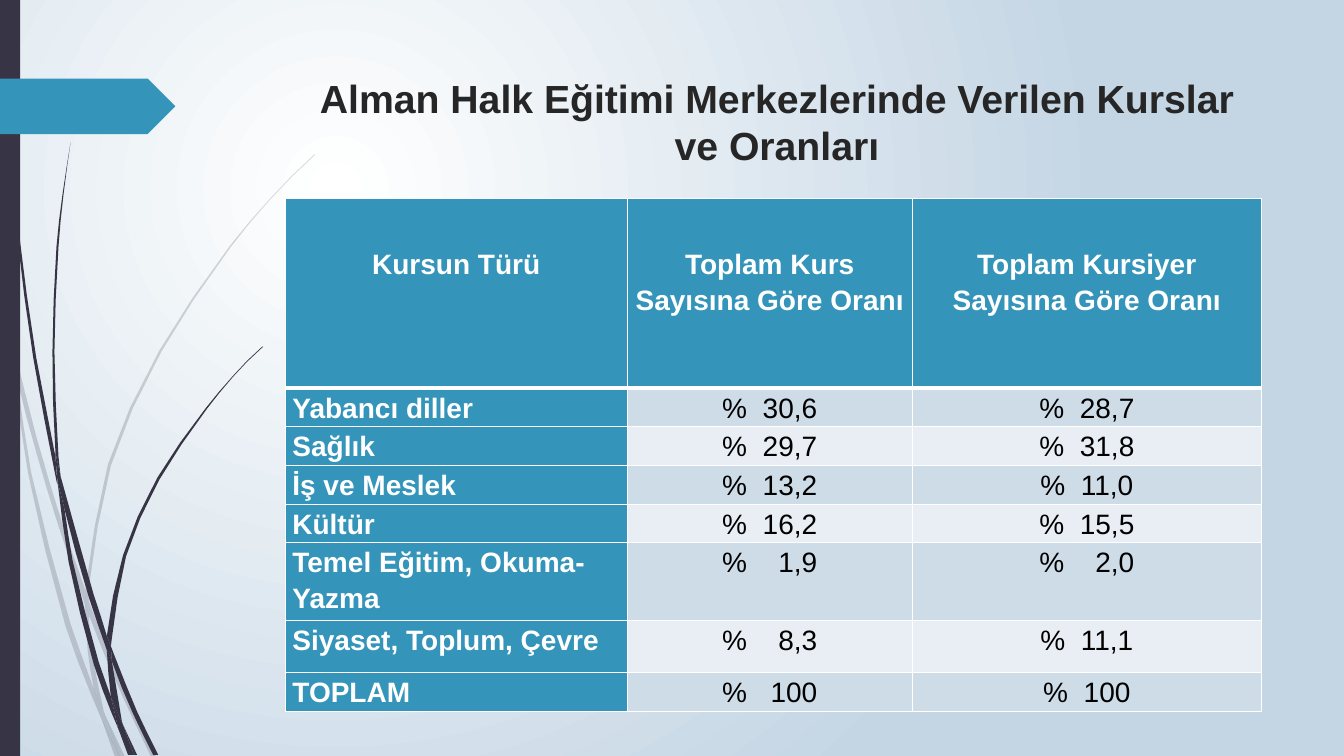
"""Build a slide with a table of course types and their shares."""
import pptx
import pptx.dml.color
import pptx.enum.shapes
import pptx.enum.text
import pptx.oxml
import pptx.oxml.ns
import pptx.util

Inches, Pt = pptx.util.Inches, pptx.util.Pt
SHAPE = pptx.enum.shapes.MSO_SHAPE
ALIGN = pptx.enum.text.PP_ALIGN
ANCHOR = pptx.enum.text.MSO_ANCHOR

TITLE = "Alman Halk Eğitimi Merkezlerinde Verilen Kurslar ve Oranları"
HEADER = ("Kursun Türü", "Toplam Kurs Sayısına Göre Oranı", "Toplam Kursiyer Sayısına Göre Oranı")
COURSES = [
    ("Yabancı diller", ("30,6", 1), ("28,7", 1)),
    ("Sağlık", ("29,7", 1), ("31,8", 1)),
    ("İş ve Meslek", ("13,2", 1), ("11,0", 1)),
    ("Kültür", ("16,2", 1), ("15,5", 1)),
    ("Temel Eğitim, Okuma- Yazma", ("1,9", 3), ("2,0", 3)),
    ("Siyaset, Toplum, Çevre", ("8,3", 3), ("11,1", 1)),
    ("TOPLAM", ("100", 2), ("100", 1)),
]
COL_WIDTHS = (3.39, 2.83, 3.46)
ROW_HEIGHTS = (1.88, 0.38, 0.38, 0.38, 0.38, 0.77, 0.52, 0.38)

THEME = {
    "accent": "3494BA", "dark": "373545", "title": "262626", "white": "FFFFFF",
    "black": "000000", "edge": "C4D5E4", "bands": ("CEDCE7", "E8EEF3"),
    "font": "Arial", "title_size": 28, "cell_size": 20, "rule": 1, "head_rule": 3,
    "pale_alpha": 20,
}

PALE_BLADES = [
    ([(0, 2.99), (0.1, 3.44), (0.11, 3.5)], [(0, 2.82), (0.09, 3.22), (0.11, 3.5)]),
    ([(0.14, 3.45), (0.17, 3.76), (0.36, 4.49), (0.58, 5.22), (0.84, 5.99)],
     [(0.14, 3.45), (0.36, 4.33), (0.62, 5.2), (0.85, 5.86)]),
    ([(0.88, 5.96), (0.88, 6.1), (1.23, 6.94), (1.5, 7.51)],
     [(0.88, 5.96), (0.92, 6.07), (1.27, 6.92), (1.55, 7.51)]),
    ([(1.05, 7.11), (1.19, 7.51)], [(1.05, 7.11), (1.24, 7.51)]),
    ([(0.11, 3.5), (0.28, 4.7), (0.65, 6.21), (0.92, 6.93), (1.01, 7.14)],
     [(0.11, 3.5), (0.17, 3.76), (0.31, 4.69), (0.7, 6.19), (0.93, 6.83), (0.99, 7.07),
      (1.01, 7.14)]),
    ([(0.84, 5.99), (0.87, 6.46), (0.93, 6.83), (0.96, 6.92), (1.05, 7.11)],
     [(0.84, 5.99), (0.88, 6.08), (0.88, 6.1), (0.91, 6.46), (1.03, 7.06), (1.05, 7.11)]),
    ([(3.12, 1.53), (2.89, 1.75), (2.68, 1.97), (2.28, 2.44), (1.58, 3.48), (1.07, 4.61),
      (0.85, 5.84), (0.85, 5.86), (0.88, 5.96)],
     [(3.12, 1.54), (2.9, 1.75), (2.68, 1.98), (2.29, 2.45), (1.6, 3.49), (1.1, 4.62),
      (0.88, 5.84), (0.88, 5.96)]),
    ([(1.01, 7.14), (1.14, 7.51)], [(1.01, 7.14), (1.19, 7.51)]),
    ([(0.85, 5.86), (0.84, 5.99), (0.88, 6.08), (0.88, 6.1)],
     [(0.85, 5.86), (0.88, 5.96), (0.88, 6.1)]),
    ([(0.93, 6.83), (0.99, 7.07), (1.01, 7.14), (1.19, 7.51)],
     [(0.93, 6.83), (0.96, 6.92), (1.05, 7.11), (1.19, 7.51)]),
]
DARK_BLADES = [
    ([(0.03, 0), (0.04, 0.48), (0.07, 1.1), (0.17, 2.33), (0.33, 3.55), (0.56, 4.77), (0.57, 4.81)],
     [(0.04, 0), (0.05, 0.48), (0.08, 1.09), (0.19, 2.32), (0.36, 3.55), (0.55, 4.53),
      (0.57, 4.81)]),
    ([(0.6, 4.72), (0.64, 5.05), (0.88, 5.92), (1.06, 6.45)],
     [(0.6, 4.72), (0.93, 5.9), (1.06, 6.31), (1.06, 6.45)]),
    ([(1.1, 6.41), (1.11, 6.56), (1.32, 7.08), (1.52, 7.49)],
     [(1.1, 6.41), (1.13, 6.49), (1.36, 7.06), (1.57, 7.49)]),
    ([(0.57, 4.77), (0.68, 5.57), (0.93, 6.59), (1.11, 7.08), (1.17, 7.22)],
     [(0.57, 4.77), (0.64, 5.05), (0.72, 5.56), (0.98, 6.57), (1.1, 6.91), (1.16, 7.17),
      (1.17, 7.22)]),
    ([(0.7, 1.41), (0.62, 1.93), (0.56, 2.45), (0.52, 3.49), (0.55, 4.49), (0.6, 4.72)],
     [(0.7, 1.41), (0.63, 1.93), (0.58, 2.45), (0.54, 3.49), (0.58, 4.53), (0.6, 4.72)]),
    ([(1.22, 7.19), (1.33, 7.49)], [(1.22, 7.19), (1.36, 7.49)]),
    ([(0.55, 4.49), (0.55, 4.53), (0.57, 4.77), (0.64, 5.05)],
     [(0.55, 4.49), (0.6, 4.72), (0.64, 5.05)]),
    ([(2.6, 3.44), (2.45, 3.58), (2.31, 3.73), (2.04, 4.05), (1.56, 4.74), (1.22, 5.51),
      (1.06, 6.31), (1.1, 6.41)],
     [(2.61, 3.44), (2.45, 3.59), (2.31, 3.74), (2.05, 4.06), (1.58, 4.76), (1.25, 5.52),
      (1.11, 6.33), (1.1, 6.41)]),
    ([(1.17, 7.22), (1.27, 7.49)], [(1.17, 7.22), (1.31, 7.49)]),
    ([(1.06, 6.45), (1.1, 6.91), (1.16, 7.06), (1.22, 7.19)],
     [(1.06, 6.45), (1.09, 6.51), (1.11, 6.56), (1.21, 7.16), (1.22, 7.19)]),
    ([(1.06, 6.31), (1.06, 6.45), (1.09, 6.51), (1.11, 6.56)],
     [(1.06, 6.31), (1.1, 6.41), (1.11, 6.56)]),
    ([(1.1, 6.91), (1.16, 7.17), (1.17, 7.22), (1.3, 7.49)],
     [(1.1, 6.91), (1.16, 7.06), (1.22, 7.19), (1.33, 7.49)]),
]


def rgb(color):
    return pptx.dml.color.RGBColor.from_string(color)


def xml(text):
    head, tail = text.split(">", 1)
    return pptx.oxml.parse_xml(f"{head} {pptx.oxml.ns.nsdecls('a', 'p')}>{tail}")


def paint(sp, color, alpha=100):
    sp.shadow.inherit = False
    sp.line.fill.background()
    sp.fill.solid()
    sp.fill.fore_color.rgb = rgb(color)
    if alpha < 100:
        clr = sp.element.spPr.find(".//" + pptx.oxml.ns.qn("a:srgbClr"))
        clr.append(xml(f'<a:alpha val="{alpha * 1000}"></a:alpha>'))


def add_run(p, text, size, color, bold):
    r = p.add_run()
    r.text = text
    f = r.font
    f.name, f.size, f.bold = THEME["font"], Pt(size), bold
    f.color.rgb = rgb(color)
    return r


def add_background(s):
    stops = "".join(f'<a:gs pos="{pos}"><a:srgbClr val="{THEME[c]}"/></a:gs>'
                    for pos, c in ((0, "white"), (100000, "edge")))
    s.element.cSld.insert(0, xml(
        f'<p:bg><p:bgPr><a:gradFill><a:gsLst>{stops}</a:gsLst><a:path path="circle">'
        '<a:fillToRect l="50000" t="50000" r="100000" b="100000"/></a:path></a:gradFill>'
        '<a:effectLst/></p:bgPr></p:bg>'))


def smooth_side(side):
    spans = zip(side[:1] + side[:-1], side[1:] + side[-1:])
    slopes = [(b[0] - a[0]) / (b[1] - a[1]) for a, b in spans]
    points = side[:1]
    for i, ((x0, y0), (x1, y1)) in enumerate(zip(side, side[1:])):
        h = y1 - y0
        if h > 0.3:
            bulge = h * (slopes[i] - slopes[i + 1]) / 8
            points.append(((x0 + x1) / 2 + bulge, (y0 + y1) / 2))
        points.append((x1, y1))
    return points


def add_blade(s, left, right, alpha):
    outline = list(dict.fromkeys(smooth_side(left) + smooth_side(right)[::-1]))
    points = [(Inches(x), Inches(y)) for x, y in outline]
    fb = s.shapes.build_freeform(*points[0])
    fb.add_line_segments(points[1:], close=True)
    paint(fb.convert_to_shape(), THEME["dark"], alpha)


def add_title(s):
    tf = s.shapes.add_textbox(Inches(2.83), Inches(0.65), Inches(9.75), Inches(1.11)).text_frame
    tf.word_wrap = True
    tf.vertical_anchor = ANCHOR.MIDDLE
    p = tf.paragraphs[0]
    p.alignment = ALIGN.CENTER
    add_run(p, TITLE, THEME["title_size"], THEME["title"], True)


def add_share(p, value, extra):
    size = THEME["cell_size"]
    for text in ("%", " ", value):
        r = add_run(p, text, size, THEME["black"], False)
        if text == " ":
            r.font._element.set("spc", str(round(extra * size * 27.8)))


def add_borders(cell, row):
    heavy = {(0, "B"), (1, "T")}
    for i, side in enumerate("LRTB"):
        width = Pt(THEME["head_rule" if (row, side) in heavy else "rule"])
        cell._tc.get_or_add_tcPr().insert(i, xml(
            f'<a:ln{side} w="{width}"><a:solidFill><a:srgbClr val="{THEME["white"]}"/>'
            f'</a:solidFill></a:ln{side}>'))


def add_table(s):
    rows = [HEADER] + COURSES
    table = s.shapes.add_table(len(rows), len(HEADER), Inches(2.83), Inches(1.97),
                               Inches(sum(COL_WIDTHS)), Inches(sum(ROW_HEIGHTS))).table
    for col, width in zip(table.columns, COL_WIDTHS):
        col.width = Inches(width)
    for i, values in enumerate(rows):
        table.rows[i].height = Inches(ROW_HEIGHTS[i])
        for j, value in enumerate(values):
            label = i == 0 or j == 0
            cell = table.cell(i, j)
            cell.margin_left = cell.margin_right = Inches(0.07)
            cell.margin_top, cell.margin_bottom = Inches(0 if i else 0.46), 0
            cell.fill.solid()
            cell.fill.fore_color.rgb = rgb(THEME["accent"] if label else THEME["bands"][(i - 1) % 2])
            add_borders(cell, i)
            p = cell.text_frame.paragraphs[0]
            p.line_spacing = 1.15
            p.alignment = ALIGN.LEFT if i and j == 0 else ALIGN.CENTER
            if label:
                add_run(p, value, THEME["cell_size"], THEME["white"], True)
            else:
                add_share(p, *value)


def main():
    prs = pptx.Presentation()
    prs.slide_width, prs.slide_height = Inches(13.33), Inches(7.5)
    s = prs.slides.add_slide(prs.slide_layouts[6])
    add_background(s)
    for blades, alpha in ((PALE_BLADES, THEME["pale_alpha"]), (DARK_BLADES, 100)):
        for left, right in blades:
            add_blade(s, left, right, alpha)
    paint(s.shapes.add_shape(SHAPE.RECTANGLE, 0, 0, Inches(0.2), prs.slide_height), THEME["dark"])
    tag = s.shapes.add_shape(SHAPE.PENTAGON, 0, Inches(0.78), Inches(1.74), Inches(0.55))
    paint(tag, THEME["accent"])
    add_title(s)
    add_table(s)
    prs.save("out.pptx")


if __name__ == "__main__":
    main()
